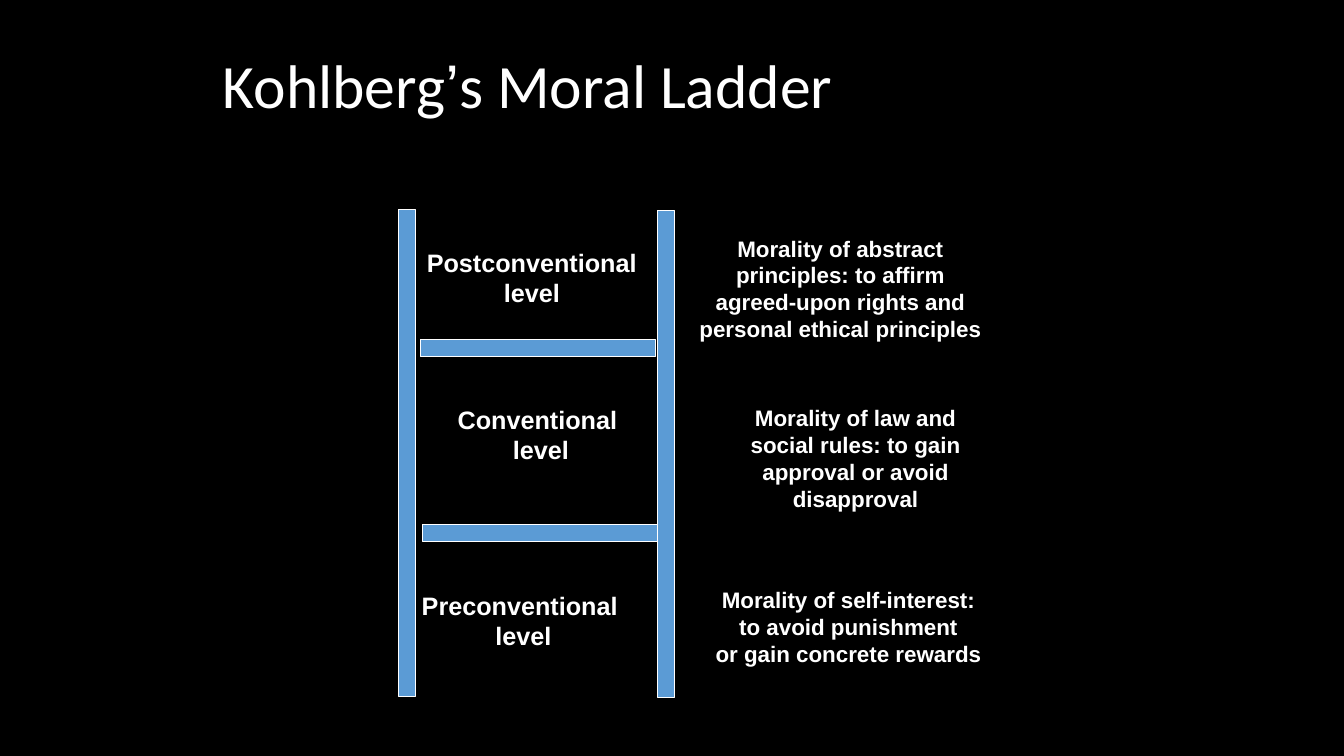
from pptx import Presentation
from pptx.dml.color import RGBColor
from pptx.enum.shapes import MSO_SHAPE as Shape
from pptx.enum.text import MSO_ANCHOR as Anchor, PP_ALIGN as Align
from pptx.util import Inches, Pt

BLACK = RGBColor(0x00, 0x00, 0x00)
WHITE = RGBColor(0xFF, 0xFF, 0xFF)
BLUE = RGBColor(0x5B, 0x9B, 0xD5)


def add_text_box(left, top, width, height, wrap):
    box = slide.shapes.add_textbox(
        Inches(left), Inches(top), Inches(width), Inches(height))
    box.text_frame.word_wrap = wrap
    return box.text_frame


def add_run(paragraph, text, font_format):
    run = paragraph.add_run()
    run.text = text
    run.font.color.rgb = WHITE
    for name, value in font_format.items():
        setattr(run.font, name, value)


presentation = Presentation()
presentation.slide_width = Inches(13.33)
presentation.slide_height = Inches(7.5)
slide = presentation.slides.add_slide(presentation.slide_layouts[6])
slide.background.fill.solid()
slide.background.fill.fore_color.rgb = BLACK

# Title
title = add_text_box(2.11, 0.25, 8.96, 1.25, True)
title.vertical_anchor = Anchor.MIDDLE
title.paragraphs[0].line_spacing = 0.9
for text, font_name in [("Kohlberg", "Calibri"), ("’", "Arial"),
                        ("s Moral Ladder", "Calibri")]:
    add_run(title.paragraphs[0], text, {"name": font_name, "size": Pt(44)})

# Descriptions beside the ladder and level names between its rails
labels = [
    (6.83, 2.28, 3.01, 1.17, 16, False,
     ["Morality of abstract", "principles: to affirm",
      "agreed-upon rights and", "personal ethical principles"]),
    (7.34, 3.96, 2.29, 1.17, 16, False,
     ["Morality of law and", "social rules: to gain",
      "approval or avoid", "disapproval"]),
    (6.99, 5.77, 2.85, 0.9, 16, False,
     ["Morality of self-interest:", "to avoid punishment",
      "or gain concrete rewards"]),
    (4.11, 2.4, 2.33, 0.7, 18, True, ["Postconventional", "level"]),
    (4.44, 3.96, 1.85, 0.7, 18, False, ["Conventional ", "level"]),
    (4.08, 5.81, 2.22, 0.7, 18, False, ["Preconventional ", "level"]),
]
for left, top, width, height, size, wrap, lines in labels:
    frame = add_text_box(left, top, width, height, wrap)
    for index, line in enumerate(lines):
        paragraph = frame.add_paragraph() if index else frame.paragraphs[0]
        paragraph.alignment = Align.CENTER
        add_run(paragraph, line,
                {"name": "Arial", "size": Pt(size), "bold": True})

# Ladder: two rails, then two rungs
THICKNESS, RAIL_LENGTH, RUNG_LENGTH = 0.17, 4.83, 2.33
bars = [
    (3.95, 2.08, THICKNESS, RAIL_LENGTH),
    (6.52, 2.09, THICKNESS, RAIL_LENGTH),
    (4.17, 3.37, RUNG_LENGTH, THICKNESS),
    (4.19, 5.2, RUNG_LENGTH, THICKNESS),
]
for left, top, width, height in bars:
    bar = slide.shapes.add_shape(
        Shape.RECTANGLE, Inches(left), Inches(top), Inches(width), Inches(height))
    bar.shadow.inherit = False
    bar.fill.solid()
    bar.fill.fore_color.rgb = BLUE
    bar.line.color.rgb = WHITE
    bar.line.width = Pt(0.75)

presentation.save("out.pptx")
